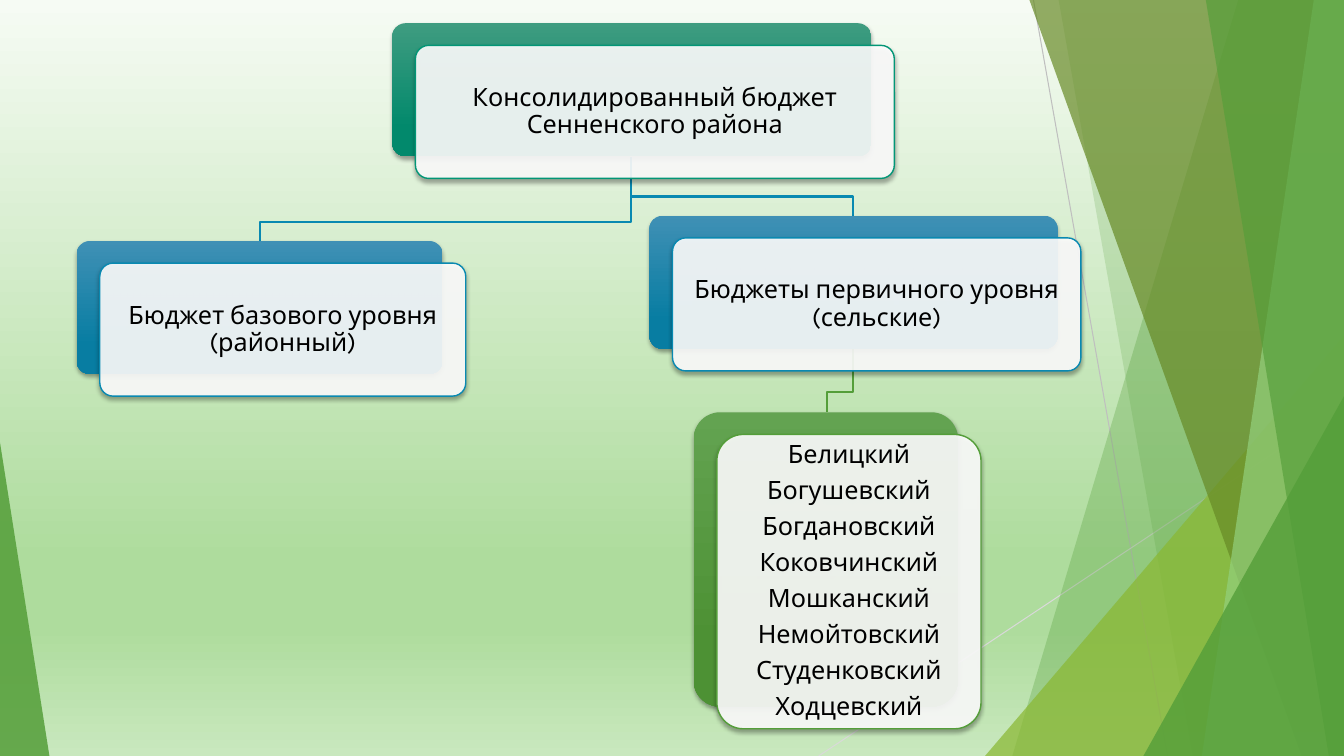
from dataclasses import dataclass

from lxml.etree import SubElement
from pptx import Presentation
from pptx.dml.color import RGBColor
from pptx.enum.shapes import MSO_CONNECTOR, MSO_SHAPE
from pptx.enum.text import MSO_ANCHOR, PP_ALIGN
from pptx.oxml.ns import qn
from pptx.shapes.autoshape import Shape
from pptx.slide import Slide
from pptx.util import Inches, Pt

Point = tuple[float, float]
Stops = tuple[tuple[int, str], ...]
WIDTH, HEIGHT = 13.33, 7.5
CARD_SHIFT = (0.23, 0.22)


@dataclass(frozen=True)
class Palette:
    """Accent line colour and the gradient of the plate behind a card."""
    line: str
    plate: Stops


@dataclass(frozen=True)
class Theme:
    font: str = "Karla"
    text_size: float = 18
    text: str = "000000"
    card: str = "FFFFFF"
    green: str = "549E39"
    lime: str = "8AB833"
    olive: str = "678A26"
    pale: str = "93D07D"
    background: Stops = ((0, "F6FBF4"), (74, "AEDC9D"), (83, "AEDC9D"), (100, "C9E8BE"))
    district: Palette = Palette("029676", ((0, "3F9C80"), (78, "02896C")))
    level: Palette = Palette("0989B1", ((0, "3F90B5"), (78, "087DA2")))
    councils: Palette = Palette("549E39", ((0, "63A351"), (78, "4D9134")))


THEME = Theme()


@dataclass(frozen=True)
class Ray:
    start: Point
    end: Point
    color: str


@dataclass(frozen=True)
class Facet:
    corners: tuple[Point, ...]
    color: str
    opacity: int


@dataclass(frozen=True)
class Wedge:
    """Right triangle standing on the bottom edge; apex is 0 (left) or 1 (right)."""
    left: float
    width: float
    height: float
    apex: int
    color: str
    opacity: int


@dataclass(frozen=True)
class Branch:
    start: Point
    bend: float
    end: Point
    color: str


@dataclass(frozen=True)
class Node:
    left: float
    top: float
    width: float
    height: float
    palette: Palette
    lines: tuple[str, ...]


def facet(top_left: float, bottom_left: float, color: str, opacity: int,
          top_right: float = WIDTH) -> Facet:
    """Four-sided facet that runs from the top to the bottom of the slide."""
    corners = ((top_left, 0), (top_right, 0), (WIDTH, HEIGHT), (bottom_left, HEIGHT))
    return Facet(corners, color, opacity)


RAYS = (
    Ray((10.25, 0), (11.58, HEIGHT), "BFBFBF"),
    Ray((WIDTH, 4.03), (8.12, HEIGHT), "D9D9D9"),
)
DECORATION: tuple[Facet | Wedge, ...] = (
    facet(12.28, 10.04, THEME.green, 30),
    facet(10.5, 11.83, THEME.green, 20),
    Wedge(9.77, 3.56, 4.17, 1, THEME.lime, 72),
    facet(10.21, 12.91, THEME.olive, 70),
    facet(13.03, 11.92, THEME.pale, 70),
    facet(11.96, 13.18, THEME.green, 65),
    Wedge(11.34, 1.99, 3.57, 1, THEME.green, 80),
    Wedge(0, 0.49, 3.11, 0, THEME.green, 85),
)
BRANCHES = (
    Branch((8.46, 3.46), 3.89, (8.2, 4.09), THEME.councils.line),
    Branch((6.26, 1.56), 1.95, (8.46, 2.14), THEME.level.line),
    Branch((6.26, 1.56), 2.2, (2.58, 2.39), THEME.level.line),
)
NODES = (
    Node(3.89, 0.23, 4.75, 1.32, THEME.district,
         ("Консолидированный бюджет Сенненского района",)),
    Node(0.76, 2.39, 3.63, 1.32, THEME.level, ("Бюджет базового уровня (районный)",)),
    Node(6.44, 2.14, 4.05, 1.32, THEME.level, ("Бюджеты первичного уровня (сельские)",)),
    Node(6.88, 4.09, 2.62, 2.92, THEME.councils,
         ("Белицкий", "Богушевский", "Богдановский", "Коковчинский",
          "Мошканский", "Немойтовский", "Студенковский", "Ходцевский")),
)


def set_gradient(owner: Slide | Shape, stops: Stops) -> None:
    """Fill a shape or a slide background with a top-to-bottom gradient."""
    fill = owner.background.fill if isinstance(owner, Slide) else owner.fill
    fill.gradient()
    gradient = owner.element.find(".//" + qn("a:gradFill"))
    for child in list(gradient):
        gradient.remove(child)
    stop_list = SubElement(gradient, qn("a:gsLst"))
    for position, color in stops:
        stop = SubElement(stop_list, qn("a:gs"), pos=str(position * 1000))
        SubElement(stop, qn("a:srgbClr"), val=color)
    SubElement(gradient, qn("a:lin"), ang="5400000", scaled="0")


def set_solid(shape: Shape, color: str, opacity: int) -> None:
    shape.fill.solid()
    shape.fill.fore_color.rgb = RGBColor.from_string(color)
    color_element = shape.element.spPr.find(qn("a:solidFill")).find(qn("a:srgbClr"))
    SubElement(color_element, qn("a:alpha"), val=str(opacity * 1000))


def set_line(shape: Shape, color: str, width: float) -> None:
    shape.line.color.rgb = RGBColor.from_string(color)
    shape.line.width = Pt(width)


def add_shadow(shape: Shape) -> None:
    shape.shadow.inherit = False
    effects = shape.element.spPr.find(qn("a:effectLst"))
    shadow = SubElement(effects, qn("a:outerShdw"), blurRad=str(Pt(3)), dist=str(Pt(2)),
                        dir="5400000", algn="ctr", rotWithShape="0")
    color = SubElement(shadow, qn("a:srgbClr"), val="000000")
    SubElement(color, qn("a:alpha"), val="35000")


def add_outline(slide: Slide, points: tuple[Point, ...], close: bool) -> Shape:
    (start_x, start_y), *rest = [(Inches(x), Inches(y)) for x, y in points]
    builder = slide.shapes.build_freeform(start_x, start_y)
    builder.add_line_segments(rest, close=close)
    shape = builder.convert_to_shape()
    shape.shadow.inherit = False
    return shape


def add_ray(slide: Slide, ray: Ray) -> None:
    ends = [Inches(value) for value in (*ray.start, *ray.end)]
    line = slide.shapes.add_connector(MSO_CONNECTOR.STRAIGHT, *ends)
    set_line(line, ray.color, 0.75)
    SubElement(line.element.spPr, qn("a:effectLst"))


def add_decoration(slide: Slide, part: Facet | Wedge) -> None:
    if isinstance(part, Facet):
        shape = add_outline(slide, part.corners, close=True)
    else:
        shape = slide.shapes.add_shape(
            MSO_SHAPE.ISOSCELES_TRIANGLE, Inches(part.left), Inches(HEIGHT - part.height),
            Inches(part.width), Inches(part.height))
        shape.adjustments[0] = part.apex
        shape.shadow.inherit = False
    set_solid(shape, part.color, part.opacity)
    shape.line.fill.background()


def add_branch(slide: Slide, branch: Branch) -> None:
    bends = ((branch.start[0], branch.bend), (branch.end[0], branch.bend))
    shape = add_outline(slide, (branch.start, *bends, branch.end), close=False)
    shape.fill.background()
    set_line(shape, branch.color, 1.5)


def add_panel(slide: Slide, node: Node, shift: Point) -> Shape:
    panel = slide.shapes.add_shape(
        MSO_SHAPE.ROUNDED_RECTANGLE, Inches(node.left + shift[0]),
        Inches(node.top + shift[1]), Inches(node.width), Inches(node.height))
    panel.adjustments[0] = 0.1
    add_shadow(panel)
    return panel


def add_node(slide: Slide, node: Node) -> None:
    """Draw a coloured plate with a translucent text card shifted over it."""
    plate = add_panel(slide, node, (0, 0))
    set_gradient(plate, node.palette.plate)
    plate.line.fill.background()
    card = add_panel(slide, node, CARD_SHIFT)
    set_solid(card, THEME.card, 90)
    set_line(card, node.palette.line, 1)
    frame = card.text_frame
    frame.word_wrap = True
    frame.vertical_anchor = MSO_ANCHOR.MIDDLE
    frame.margin_left = frame.margin_right = Inches(0.07)
    frame.margin_top = frame.margin_bottom = Inches(0.07)
    frame.text = "\n".join(node.lines)
    for para in frame.paragraphs:
        para.alignment = PP_ALIGN.CENTER
        para.line_spacing = 0.9
        para.space_after = Pt(THEME.text_size * 0.35)
        for span in para.runs:
            span.font.name = THEME.font
            span.font.size = Pt(THEME.text_size)
            span.font.color.rgb = RGBColor.from_string(THEME.text)


def main() -> None:
    deck = Presentation()
    deck.slide_width, deck.slide_height = Inches(WIDTH), Inches(HEIGHT)
    slide = deck.slides.add_slide(deck.slide_layouts[6])
    set_gradient(slide, THEME.background)
    for ray in RAYS:
        add_ray(slide, ray)
    for part in DECORATION:
        add_decoration(slide, part)
    for branch in BRANCHES:
        add_branch(slide, branch)
    for node in NODES:
        add_node(slide, node)
    deck.save("out.pptx")


if __name__ == "__main__":
    main()
